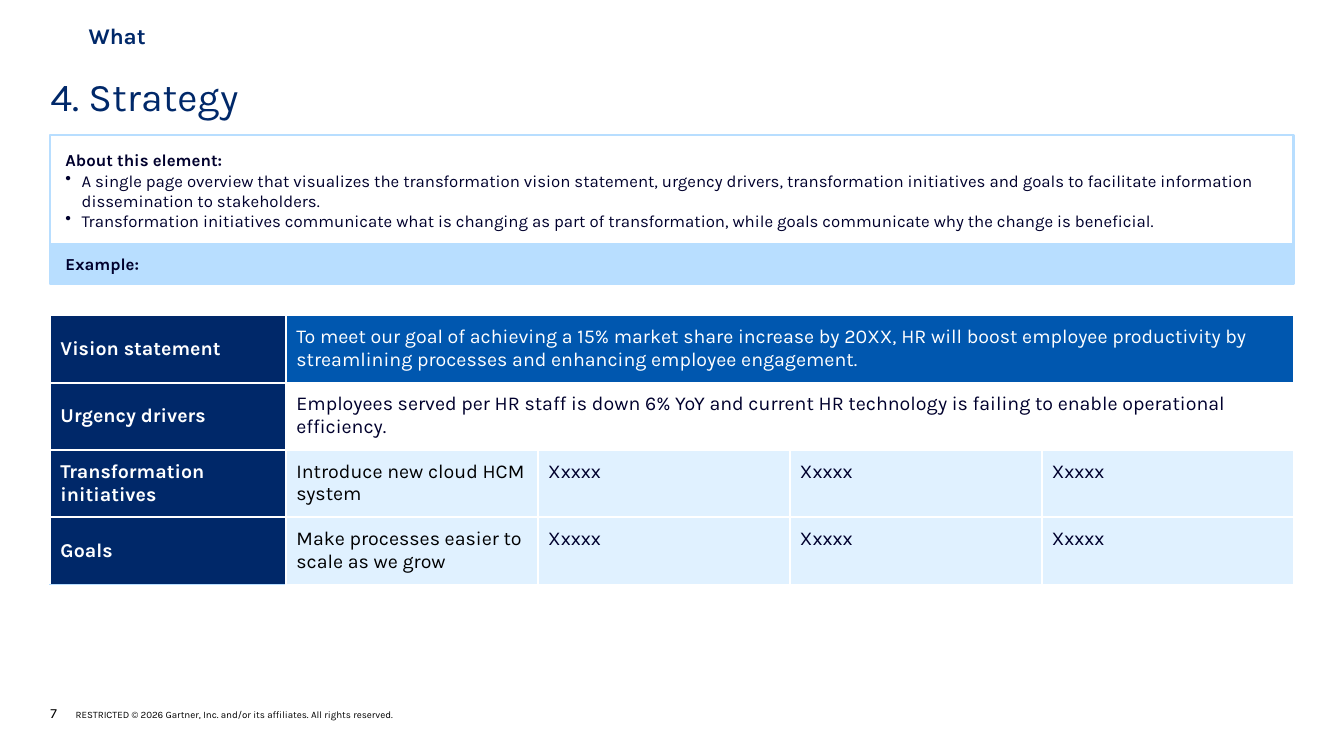
from lxml import etree
from pptx import Presentation
from pptx.dml.color import RGBColor
from pptx.enum.shapes import MSO_SHAPE
from pptx.enum.text import MSO_ANCHOR, PP_ALIGN
from pptx.oxml.ns import qn
from pptx.util import Inches, Pt

RECT = MSO_SHAPE.RECTANGLE
TOP, MID, LOW = MSO_ANCHOR.TOP, MSO_ANCHOR.MIDDLE, MSO_ANCHOR.BOTTOM
LEFT = PP_ALIGN.LEFT
FONT = "Karla"
HUE = {"navy": "002869", "ink": "00002D", "blue": "0057AF", "sky": "B8DEFF",
       "pale": "E0F1FF", "white": "FFFFFF", "black": "000000"}
WIDE, HIGH = 13.33, 7.5
EDGE = 0.5
SPAN = WIDE - 2 * EDGE
PAD = 0.15

ABOUT = [
    "A single page overview that visualizes the transformation vision statement, urgency drivers, "
    "transformation initiatives and goals to facilitate information dissemination to stakeholders.",
    "Transformation initiatives communicate what is changing as part of transformation, "
    "while goals communicate why the change is beneficial.",
]
ROWS = [
    ("Vision statement", "blue", "white",
     ["To meet our goal of achieving a 15% market share increase by 20XX, HR will boost "
      "employee productivity by streamlining processes and enhancing employee engagement."]),
    ("Urgency drivers", "white", "ink",
     ["Employees served per HR staff is down 6% YoY and current HR technology "
      "is failing to enable operational efficiency."]),
    ("Transformation initiatives", "pale", "black",
     ["Introduce new cloud HCM system"] + ["Xxxxx"] * 3),
    ("Goals", "pale", "black",
     ["Make processes easier to scale as we grow"] + ["Xxxxx"] * 3),
]


def tint(name):
    """Return the named colour."""
    return RGBColor.from_string(HUE[name])


def write(para, text, size=12, hue="ink", bold=False, hang=0, mark=None):
    """Add a formatted run, with an optional hanging indent and bullet."""
    para.alignment = LEFT
    if hang:
        props = para._p.get_or_add_pPr()
        props.set("marL", str(Inches(hang)))
        props.set("indent", str(-Inches(hang)))
        if mark:
            etree.SubElement(props, qn("a:buChar")).set("char", mark)
    run = para.add_run()
    run.text = text
    font = run.font
    font.name, font.size, font.bold = FONT, Pt(size), bold
    font.color.rgb = tint(hue)


def frame(shape, across=0, down=0, anchor=TOP):
    """Set the margins and anchor of a shape's text and return its frame."""
    area = shape.text_frame
    area.word_wrap = True
    area.margin_left = area.margin_right = Inches(across)
    area.margin_top = area.margin_bottom = Inches(down)
    area.vertical_anchor = anchor
    return area


def label(slide, box, anchor=TOP):
    """Add an unpadded text box and return its first paragraph."""
    shape = slide.shapes.add_textbox(*map(Inches, box))
    return frame(shape, anchor=anchor).paragraphs[0]


def panel(slide, box, down, fill=None):
    """Add an outlined rectangle and return its text frame."""
    shape = slide.shapes.add_shape(RECT, *map(Inches, box))
    shape.shadow.inherit = False
    if fill:
        shape.fill.solid()
        shape.fill.fore_color.rgb = tint(fill)
    else:
        shape.fill.background()
    shape.line.color.rgb = tint("sky")
    shape.line.width = Pt(1.5)
    return frame(shape, PAD, down)


def head(slide, box):
    """Place the section tag and the title in the box."""
    left, top, width, height = box
    tag = label(slide, (left + 0.38, top, 2.86, 0.21), MID)
    write(tag, "What", size=16, hue="navy", bold=True)
    title = label(slide, (left, top + height - 0.49, width, 0.49))
    write(title, "4. Strategy", size=28, hue="navy")


def about(slide, box):
    """Place the description and the example band in the box."""
    left, top, width, height = box
    band = 0.4
    area = panel(slide, (left, top, width, height - band + 0.03), PAD)
    write(area.paragraphs[0], "About this element:", bold=True)
    for point in ABOUT:
        write(area.add_paragraph(), point, hang=0.16, mark="•")
    area = panel(slide, (left, top + height - band, width, band), 0.1, "sky")
    write(area.paragraphs[0], "Example:", bold=True)


def edge(cell, low):
    """Draw white borders around a cell, with its own lower colour."""
    props = cell._tc.get_or_add_tcPr()
    for spot, side in enumerate("LRTB"):
        line = etree.Element(qn(f"a:ln{side}"), w=str(Pt(1.5)))
        fill = etree.SubElement(line, qn("a:solidFill"))
        hue = low if side == "B" else "white"
        etree.SubElement(fill, qn("a:srgbClr")).set("val", HUE[hue])
        props.insert(spot, line)


def fill_cell(cell, text, fill, anchor=TOP, low="white", **style):
    """Fill, border and write one table cell."""
    cell.margin_left = cell.margin_right = Inches(0.1)
    cell.margin_top = cell.margin_bottom = Inches(0.1)
    cell.vertical_anchor = anchor
    cell.fill.solid()
    cell.fill.fore_color.rgb = tint(fill)
    edge(cell, low)
    if text:
        write(cell.text_frame.paragraphs[0], text, size=14, **style)


def plan(slide, box):
    """Place the strategy table in the box."""
    width, height = box[2:]
    first, count = 2.34, 4
    grid = slide.shapes.add_table(len(ROWS), count + 1, *map(Inches, box)).table
    for spot, col in enumerate(grid.columns):
        col.width = Inches((width - first) / count if spot else first)
    for row in grid.rows:
        row.height = Inches(height / len(ROWS))
    for r, (name, fill, hue, texts) in enumerate(ROWS):
        last = r == len(ROWS) - 1
        fill_cell(grid.cell(r, 0), name, "navy", MID, "sky" if last else "white",
                  hue="white", bold=True)
        for c in range(count):
            text = texts[c] if c < len(texts) else ""
            fill_cell(grid.cell(r, c + 1), text, fill, hue="ink" if c else hue)
        if len(texts) == 1:
            grid.cell(r, 1).merge(grid.cell(r, count))


def foot(slide, box):
    """Place the page number and the rights line in the box."""
    para = label(slide, box, LOW)
    write(para, "7", size=10, hue="black", hang=0.25)
    write(para, "\tRESTRICTED © 2026 Gartner, Inc. and/or its affiliates. All rights reserved.",
          size=7, hue="black")


def main():
    """Build and save the slide."""
    deck = Presentation()
    deck.slide_width, deck.slide_height = Inches(WIDE), Inches(HIGH)
    slide = deck.slides.add_slide(deck.slide_layouts[6])
    head(slide, (EDGE, 0.25, SPAN, 0.96))
    about(slide, (EDGE, 1.34, SPAN, 1.48))
    plan(slide, (EDGE, 3.13, SPAN, 2.67))
    foot(slide, (EDGE, 6.99, 0.6 * WIDE, 0.17))
    deck.save("out.pptx")


if __name__ == "__main__":
    main()
